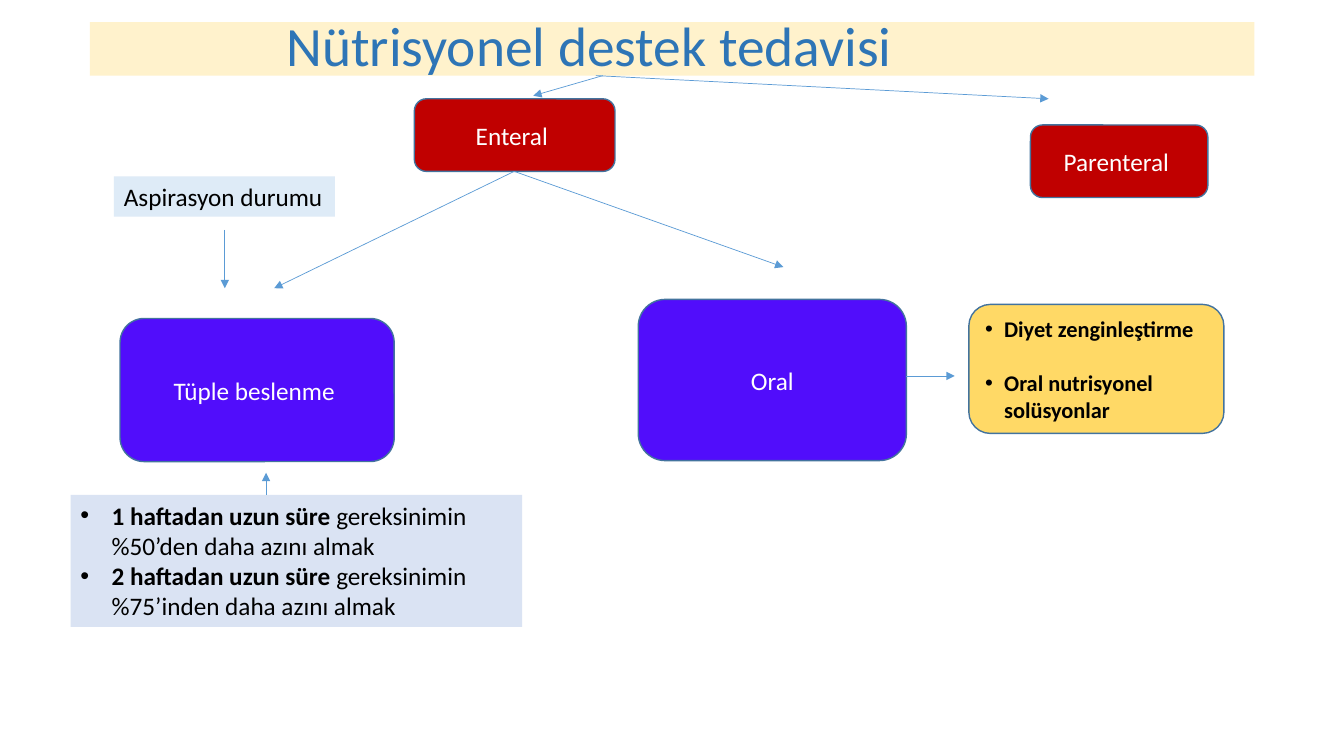
from pptx import Presentation
from pptx import util as u
from pptx.dml.color import RGBColor
from pptx.enum import shapes, text
from pptx.oxml import parse_xml
from pptx.oxml.ns import nsdecls

WIDTH, HEIGHT = u.Inches(13.33), u.Inches(7.5)


def color(value):
    return RGBColor.from_string(value)


class Board:
    """Holds the style and the slide; lengths are percent of the slide's size."""
    font = "Calibri"
    outline, arrow_line = "43739E", "5B9BD5"
    black, white = "000000", "FFFFFF"

    def __init__(self, slide):
        self.slide = slide

    def place(self, x, y):
        return round(WIDTH * x / 100), round(HEIGHT * y / 100)

    def area(self, left, top, width, height):
        return *self.place(left, top), *self.place(width, height)

    def add_run(self, paragraph, words, size, ink, bold=False):
        run = paragraph.add_run()
        run.text = words
        run.font.name, run.font.size, run.font.bold = self.font, u.Pt(size), bold
        run.font.color.rgb = color(ink)

    def fill(self, shape, value):
        shape.fill.solid()
        shape.fill.fore_color.rgb = color(value)

    def title(self, area, words, size, ink, fill, indent):
        shape = self.slide.shapes.title
        shape.left, shape.top, shape.width, shape.height = self.area(*area)
        self.fill(shape, fill)
        frame = shape.text_frame
        frame.auto_size = text.MSO_AUTO_SIZE.NONE
        frame.vertical_anchor = text.MSO_ANCHOR.MIDDLE
        frame.margin_left = u.Inches(indent)
        paragraph = frame.paragraphs[0]
        paragraph.alignment = text.PP_ALIGN.LEFT
        paragraph.line_spacing = 0.9
        self.add_run(paragraph, words, size, ink)

    def box(self, area, fill, words=None):
        shape = self.slide.shapes.add_shape(
            shapes.MSO_SHAPE.ROUNDED_RECTANGLE, *self.area(*area))
        shape.shadow.inherit = False
        self.fill(shape, fill)
        shape.line.color.rgb = color(self.outline)
        shape.line.width = u.Pt(1)
        frame = shape.text_frame
        frame.word_wrap = True
        frame.vertical_anchor = text.MSO_ANCHOR.MIDDLE
        if words:
            frame.paragraphs[0].alignment = text.PP_ALIGN.CENTER
            self.add_run(frame.paragraphs[0], words, 18, self.white)
        return shape

    def note(self, area, fill, wrap=True):
        shape = self.slide.shapes.add_textbox(*self.area(*area))
        self.fill(shape, fill)
        shape.text_frame.word_wrap = wrap
        shape.text_frame.auto_size = text.MSO_AUTO_SIZE.SHAPE_TO_FIT_TEXT
        return shape

    def bullets(self, shape, items, size, indent, gap=0):
        """Each item is a bold part and a plain part, which may be empty."""
        frame = shape.text_frame
        for index, (bold_part, plain_part) in enumerate(items):
            paragraph = frame.add_paragraph() if index else frame.paragraphs[0]
            paragraph.alignment = text.PP_ALIGN.LEFT
            paragraph.space_before = u.Pt(gap if index else 0)
            self.add_run(paragraph, bold_part, size, self.black, bold=True)
            if plain_part:
                self.add_run(paragraph, plain_part, size, self.black)
            properties = paragraph._p.get_or_add_pPr()
            properties.set("marL", str(u.Inches(indent)))
            properties.set("indent", str(-u.Inches(indent)))
            for tag in ('buFont typeface="Arial"', 'buChar char="•"'):
                properties.append(parse_xml(f"<a:{tag[:6]} {nsdecls('a')} {tag[6:]}/>"))

    def arrow(self, start, end):
        connector = self.slide.shapes.add_connector(
            shapes.MSO_CONNECTOR.STRAIGHT, *self.place(*start), *self.place(*end))
        connector.line.color.rgb = color(self.arrow_line)
        connector.line.width = u.Pt(0.5)
        connector.line._get_or_add_ln().append(
            parse_xml(f'<a:tailEnd {nsdecls("a")} type="triangle"/>'))
        connector._element.spPr.append(parse_xml(f'<a:effectLst {nsdecls("a")}/>'))


def main():
    presentation = Presentation()
    presentation.slide_width, presentation.slide_height = WIDTH, HEIGHT
    board = Board(presentation.slides.add_slide(presentation.slide_layouts[5]))

    # Title band
    board.title((6.68, 2.93, 86.65, 7.07), "Nütrisyonel destek tedavisi",
                39.6, "2E75B6", "FFF2CC", indent=1.95)

    # Feeding routes
    red, violet = "C00000", "510DFB"
    board.box((30.83, 13.07, 14.93, 9.6), red, "Enteral ")
    board.box((76.67, 16.53, 13.2, 9.6), red, "Parenteral ")
    board.box((8.93, 42.13, 20.4, 18.93), violet, "Tüple beslenme ")
    board.box((47.49, 39.6, 19.95, 21.33), violet, "Oral")

    # Oral options
    options = board.box((72.09, 40.27, 18.98, 17.07), "FFD966")
    board.bullets(options, [("Diyet zenginleştirme", ""),
                            ("Oral nutrisyonel solüsyonlar", "")],
                  size=16, indent=0.19, gap=19.5)

    # Reasons for tube feeding
    criteria = board.note((5.25, 65.47, 33.61, 17.47), "DAE3F3")
    board.bullets(criteria, [
        ("1 haftadan uzun süre ", "gereksinimin %50’den daha azını almak"),
        ("2 haftadan uzun süre ", "gereksinimin %75’inden daha azını almak"),
    ], size=18, indent=0.31)
    aspiration = board.note((8.48, 23.33, 16.43, 5.33), "DEEBF7", wrap=False)
    board.add_run(aspiration.text_frame.paragraphs[0], "Aspirasyon durumu",
                  18, board.black)

    # Arrows
    enteral_foot = (38.26, 22.67)
    for start, end in [
        ((44.86, 10), (39.68, 12.67)),
        ((44.34, 10), (78.02, 13.07)),
        (enteral_foot, (20.4, 38.13)),
        (enteral_foot, (58.29, 35.33)),
        ((67.44, 49.73), (71.04, 49.73)),
        ((19.8, 65.47), (19.8, 62.53)),
        ((16.73, 30.4), (16.73, 38.13)),
    ]:
        board.arrow(start, end)

    presentation.save("out.pptx")


if __name__ == "__main__":
    main()
